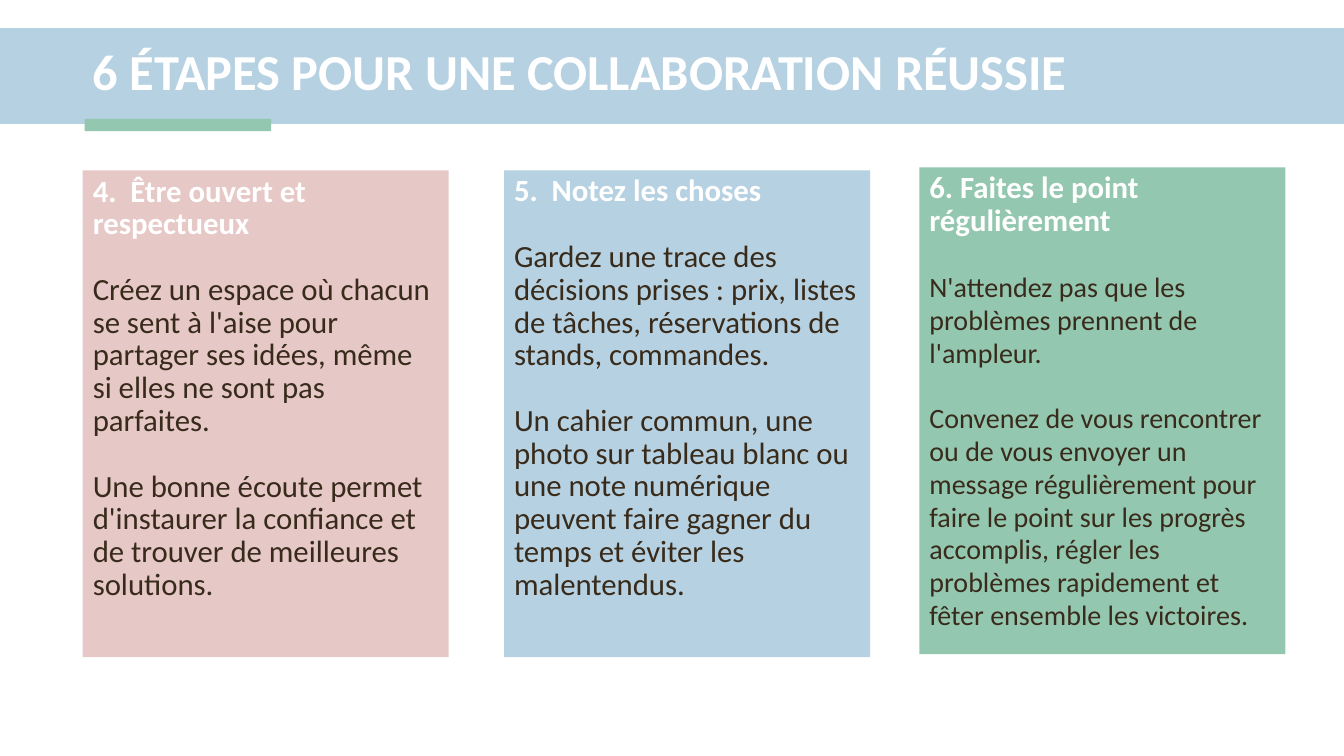
"""Build the slide on the last three steps of a successful collaboration."""
from lxml import etree
from pptx import Presentation
from pptx import util as u
from pptx.dml.color import RGBColor
from pptx.enum import shapes, text
from pptx.oxml import ns

WHITE = RGBColor(0xFF, 0xFF, 0xFF)
BROWN = RGBColor(0x38, 0x2B, 0x1B)
PINK = RGBColor(0xE6, 0xC8, 0xC7)
BLUE = RGBColor(0xB6, 0xD1, 0xE1)
GREEN = RGBColor(0x94, 0xC7, 0xB0)

FONT = "Calibri"
WIDTH, HEIGHT = 13.33, 7.5
MARGIN = 0.82
CARD_WIDTH, CARD_HEIGHT = 3.63, 4.83
LINE = u.Pt(23.4)

CARDS = [
    (MARGIN, 1.69, PINK, 22, "4.  Être ouvert et respectueux", [
        "Créez un espace où chacun se sent à l'aise pour partager ses idées, "
        "même si elles ne sont pas parfaites.",
        "Une bonne écoute permet d'instaurer la confiance et de trouver de "
        "meilleures solutions."]),
    (5, 1.69, BLUE, 22, "5.  Notez les choses", [
        "Gardez une trace des décisions prises : prix, listes de tâches, "
        "réservations de stands, commandes.",
        "Un cahier commun, une photo sur tableau blanc ou une note numérique "
        "peuvent faire gagner du temps et éviter les malentendus."]),
    (9.12, 1.66, GREEN, 20, "6. Faites le point régulièrement", [
        "N'attendez pas que les problèmes prennent de l'ampleur.",
        "Convenez de vous rencontrer ou de vous envoyer un message "
        "régulièrement pour faire le point sur les progrès accomplis, régler "
        "les problèmes rapidement et fêter ensemble les victoires."]),
]


def place(box, left, top, width, height):
    """Move and size a shape, in inches."""
    box.left, box.top = u.Inches(left), u.Inches(top)
    box.width, box.height = u.Inches(width), u.Inches(height)


def paint(box, color):
    """Give a shape a plain fill."""
    box.fill.solid()
    box.fill.fore_color.rgb = color


def add_band(page, color, left, top, width, height):
    """Add a flat rectangle behind the title."""
    band = page.shapes.add_shape(
        shapes.MSO_SHAPE.RECTANGLE,
        *map(u.Inches, (left, top, width, height)))
    paint(band, color)
    band.line.fill.background()
    band.shadow.inherit = False
    page.shapes.title.element.addprevious(band.element)


def set_font(para, size, color, bold):
    """Set the font of a whole paragraph."""
    para.font.name = FONT
    para.font.size = u.Pt(size)
    para.font.color.rgb = color
    para.font.bold = bold


def prepare_frame(box, anchor):
    """Make a text frame wrap at a fixed size."""
    frame = box.text_frame
    frame.word_wrap = True
    frame.auto_size = text.MSO_AUTO_SIZE.NONE
    frame.vertical_anchor = anchor
    return frame


def fill_title(title, wording):
    """Write the slide title across the banner."""
    place(title, MARGIN, 0.34, 11.93, 0.79)
    frame = prepare_frame(title, text.MSO_ANCHOR.MIDDLE)
    para = frame.paragraphs[0]
    para.text = wording
    para.alignment = text.PP_ALIGN.LEFT
    para.line_spacing = 0.9
    set_font(para, 36, WHITE, True)


def fill_card(box, left, top, color, size, heading, advice):
    """Turn a text shape into a coloured card with a heading and advice."""
    place(box, left, top, CARD_WIDTH, CARD_HEIGHT)
    paint(box, color)
    frame = prepare_frame(box, text.MSO_ANCHOR.TOP)
    for index, wording in enumerate([heading, *advice]):
        para = frame.paragraphs[0] if index == 0 else frame.add_paragraph()
        para.text = wording
        para.alignment = text.PP_ALIGN.LEFT
        para.line_spacing = LINE
        para.space_before = LINE if index else u.Pt(0)
        para.space_after = u.Pt(0)
        properties = para._p.get_or_add_pPr()
        properties.set("marL", "0")
        properties.set("indent", "0")
        etree.SubElement(properties, ns.qn("a:buNone"))
        if index:
            set_font(para, size, BROWN, False)
        else:
            set_font(para, 22, WHITE, True)


def main():
    """Build and save the slide."""
    deck = Presentation()
    deck.slide_width, deck.slide_height = u.Inches(WIDTH), u.Inches(HEIGHT)
    page = deck.slides.add_slide(deck.slide_layouts[1])
    add_band(page, BLUE, 0, 0.28, WIDTH, 0.95)
    add_band(page, GREEN, 0.84, 1.18, 1.85, 0.12)
    fill_title(page.shapes.title, "6 ÉTAPES POUR UNE COLLABORATION RÉUSSIE")
    for index, card in enumerate(CARDS):
        box = page.shapes.add_textbox(0, 0, 0, 0) if index else page.placeholders[1]
        fill_card(box, *card)
    deck.save("out.pptx")


if __name__ == "__main__":
    main()
